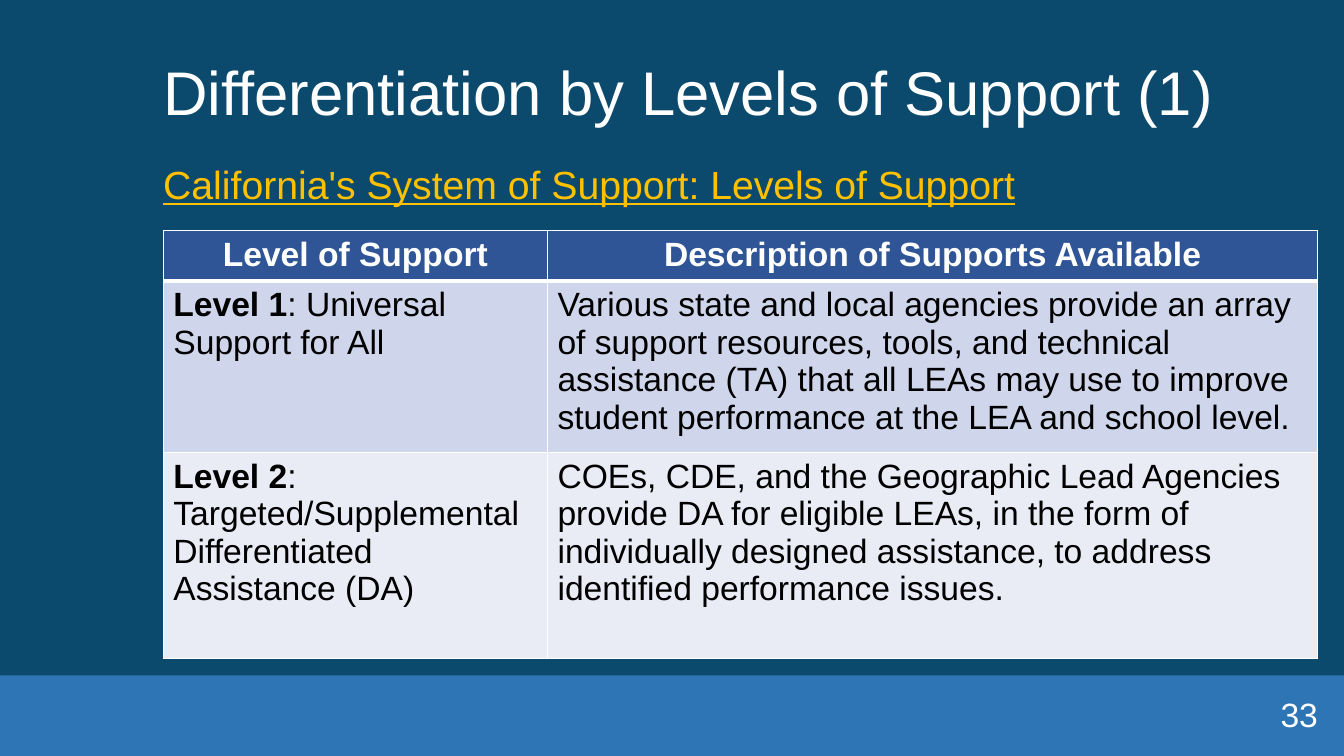
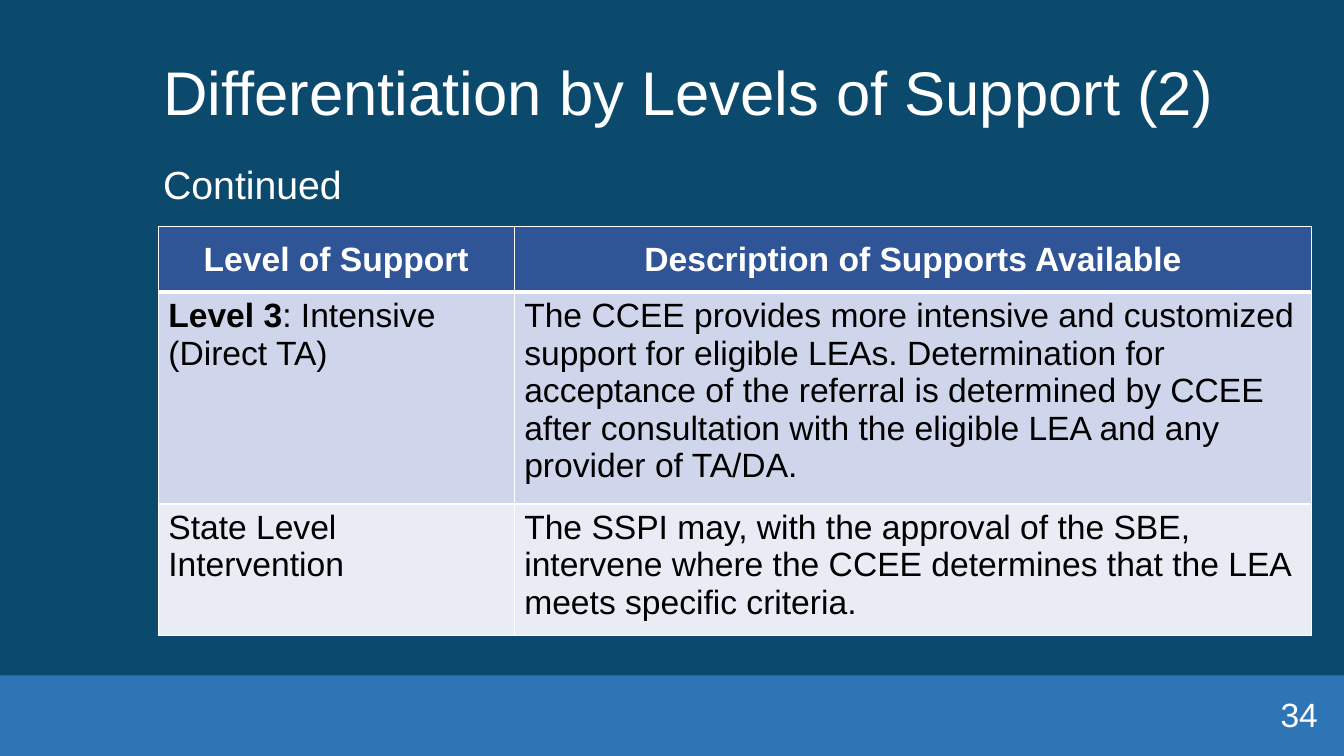
from lxml import etree
from pptx import Presentation
from pptx.dml.color import RGBColor
from pptx.enum.shapes import MSO_SHAPE
from pptx.enum.text import MSO_ANCHOR, PP_ALIGN
from pptx.oxml.ns import qn
from pptx.util import Inches, Pt

LEFT, CENTER, RIGHT = PP_ALIGN.LEFT, PP_ALIGN.CENTER, PP_ALIGN.RIGHT
TOP, MIDDLE = MSO_ANCHOR.TOP, MSO_ANCHOR.MIDDLE
RECTANGLE = MSO_SHAPE.RECTANGLE

# Shared look
FONT = "Arial"
WHITE, BLACK, GOLD = "FFFFFF", "000000", "FFC000"
NAVY, BAND_BLUE, HEADER_BLUE = "0C4A6D", "2E75B6", "2F5597"
ROW_FILLS = ("CFD5EA", "E9EBF5")
WIDTH, HEIGHT = 13.33, 7.5
BAND_HEIGHT = 0.8
TEXT_LEFT, TEXT_WIDTH = 1.52, 11.45
TITLE_SIZE, SUBTITLE_SIZE, BODY_SIZE = 44, 28, 24
HEADERS = ("Level of Support", "Description of Supports Available")

# Content: each table row is (bold lead, rest of first cell, description)
SLIDES = [
    {
        "title": "Differentiation by Levels of Support (1)",
        "subtitle": "California's System of Support: Levels of Support",
        "subtitle_color": GOLD,
        "underline": True,
        "number": 33,
        "table_at": (1.62, 2.29),
        "columns": (3.81, 7.64),
        "heights": (0.49, 1.7, 2.04),
        "header_anchor": TOP,
        "rows": [
            ("Level 1", ": Universal Support for All",
             "Various state and local agencies provide an array of support "
             "resources, tools, and technical assistance (TA) that all LEAs may "
             "use to improve student performance at the LEA and school level."),
            ("Level 2", ": Targeted/Supplemental Differentiated Assistance (DA)",
             "COEs, CDE, and the Geographic Lead Agencies provide DA for eligible "
             "LEAs, in the form of individually designed assistance, to address "
             "identified performance issues."),
        ],
    },
    {
        "title": "Differentiation by Levels of Support (2)",
        "subtitle": "Continued",
        "subtitle_color": WHITE,
        "underline": False,
        "number": 34,
        "table_at": (1.57, 2.25),
        "columns": (3.53, 7.91),
        "heights": (0.65, 2.1, 1.3),
        "header_anchor": MIDDLE,
        "rows": [
            ("Level 3", ": Intensive (Direct TA)",
             "The CCEE provides more intensive and customized support for eligible "
             "LEAs. Determination for acceptance of the referral is determined by "
             "CCEE after consultation with the eligible LEA and any provider of "
             "TA/DA."),
            ("", "State Level Intervention",
             "The SSPI may, with the approval of the SBE, intervene where the CCEE "
             "determines that the LEA meets specific criteria."),
        ],
    },
]


def rgb(value):
    return RGBColor.from_string(value)


def paint(target, color):
    target.fill.solid()
    target.fill.fore_color.rgb = rgb(color)


def write(frame, parts, size, color, align=LEFT):
    """Fill the first paragraph with (text, bold) parts."""
    para = frame.paragraphs[0]
    para.alignment = align
    para.font.name, para.font.size = FONT, Pt(size)
    para.font.color.rgb = rgb(color)
    for text, bold in parts:
        if text:
            span = para.add_run()
            span.text = text
            span.font.bold = bold
    return para


def add_text(page, place, text, size, color, align=LEFT, anchor=MIDDLE):
    box = page.shapes.add_textbox(*map(Inches, place))
    box.text_frame.word_wrap = True
    box.text_frame.vertical_anchor = anchor
    return write(box.text_frame, [(text, False)], size, color, align)


def add_borders(cell, bottom=1, top=1):
    properties = cell._tc.get_or_add_tcPr()
    for side, points in (("L", 1), ("R", 1), ("T", top), ("B", bottom)):
        line = etree.SubElement(properties, qn(f"a:ln{side}"), w=str(Pt(points)))
        fill = etree.SubElement(line, qn("a:solidFill"))
        etree.SubElement(fill, qn("a:srgbClr"), val=WHITE)


def add_levels_table(page, content):
    columns, heights = content["columns"], content["heights"]
    place = (*content["table_at"], sum(columns), sum(heights))
    table = page.shapes.add_table(len(heights), len(columns),
                                  *map(Inches, place)).table
    table.horz_banding = False
    for column, width in zip(table.columns, columns):
        column.width = Inches(width)
    for row, height in zip(table.rows, heights):
        row.height = Inches(height)

    # Header row, with a heavier rule below
    for index, label in enumerate(HEADERS):
        cell = table.cell(0, index)
        add_borders(cell, bottom=3)
        paint(cell, HEADER_BLUE)
        cell.vertical_anchor = content["header_anchor"]
        write(cell.text_frame, [(label, True)], BODY_SIZE, WHITE, CENTER)

    # Level rows
    for number, (lead, rest, description) in enumerate(content["rows"], 1):
        cells = ([(lead, True), (rest, False)], [(description, False)])
        for index, parts in enumerate(cells):
            cell = table.cell(number, index)
            add_borders(cell, top=3 if number == 1 else 1)
            paint(cell, ROW_FILLS[number - 1])
            write(cell.text_frame, parts, BODY_SIZE, BLACK)


def add_page(deck, content):
    page = deck.slides.add_slide(deck.slide_layouts[6])

    # Footer band
    band_top = HEIGHT - BAND_HEIGHT
    band = page.shapes.add_shape(
        RECTANGLE, *map(Inches, (0, band_top, WIDTH, BAND_HEIGHT)))
    band.shadow.inherit = False
    paint(band, BAND_BLUE)
    band.line.fill.background()

    # Title and subtitle
    title = add_text(page, (TEXT_LEFT, 0.22, TEXT_WIDTH, 1.45),
                     content["title"], TITLE_SIZE, WHITE)
    title.line_spacing = 0.9
    subtitle = add_text(page, (TEXT_LEFT, 1.54, TEXT_WIDTH, 0.55),
                        content["subtitle"], SUBTITLE_SIZE,
                        content["subtitle_color"], anchor=TOP)
    subtitle.runs[0].font.underline = content["underline"]

    add_levels_table(page, content)

    # Page number
    add_text(page, (10.17, 6.88, 3, 0.4), str(content["number"]),
             BODY_SIZE, WHITE, RIGHT)


def main():
    deck = Presentation()
    deck.slide_width, deck.slide_height = Inches(WIDTH), Inches(HEIGHT)
    paint(deck.slide_master.background, NAVY)
    for content in SLIDES:
        add_page(deck, content)
    deck.save("out.pptx")


if __name__ == "__main__":
    main()
